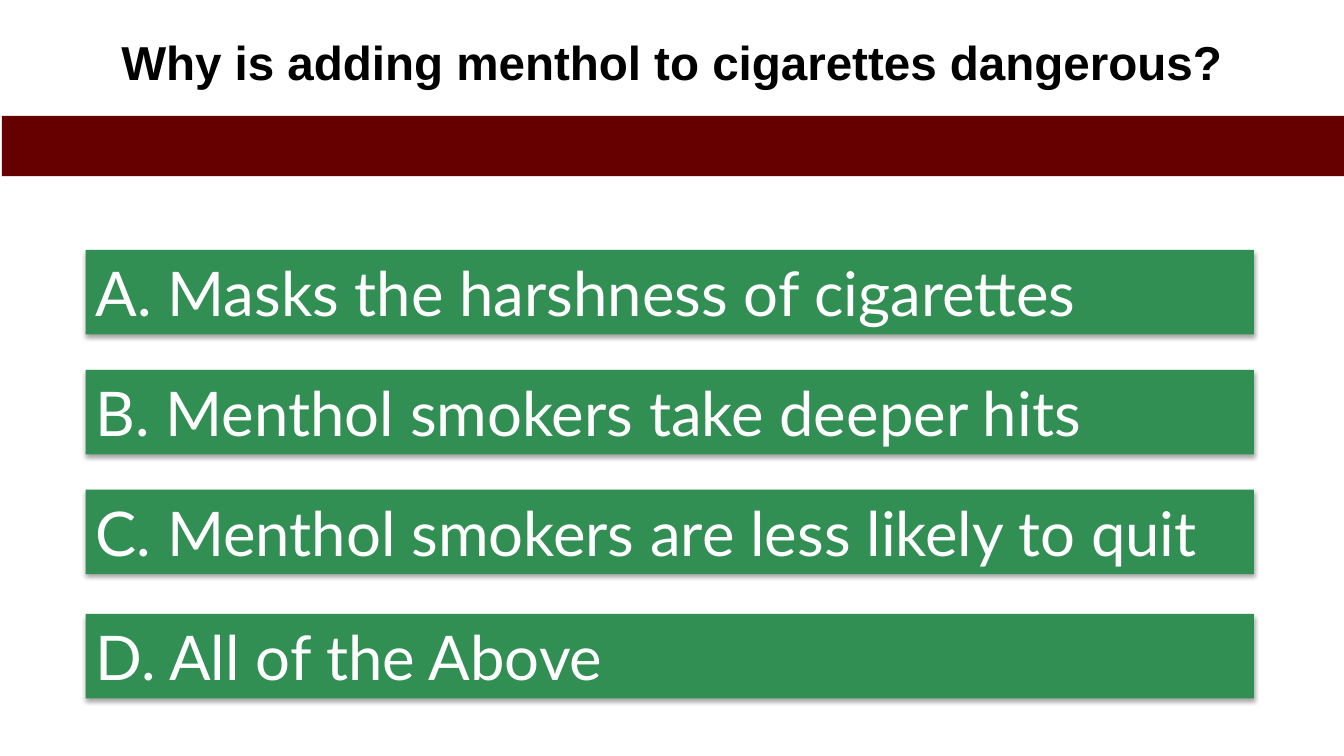
from lxml import etree
from pptx import Presentation
from pptx.dml.color import RGBColor
from pptx.enum.shapes import MSO_SHAPE
from pptx.enum.text import MSO_ANCHOR, MSO_AUTO_SIZE, PP_ALIGN
from pptx.oxml.ns import qn
from pptx.util import Cm, Pt

RECTANGLE = MSO_SHAPE.RECTANGLE
TOP, MIDDLE = MSO_ANCHOR.TOP, MSO_ANCHOR.MIDDLE
LEFT, CENTER = PP_ALIGN.LEFT, PP_ALIGN.CENTER
GROW = MSO_AUTO_SIZE.SHAPE_TO_FIT_TEXT

COLORS = {
    "question": "000000",
    "band": "660000",
    "answer": "328F54",
    "answer_text": "FFFFFF",
    "shadow": "000000",
}
SLIDE_WIDTH, SLIDE_HEIGHT = Cm(33.87), Cm(19.05)
QUESTION = "Why is adding menthol to cigarettes dangerous?"
ANSWERS = [
    ("A. Masks the harshness of cigarettes", Cm(6.3)),
    ("B. Menthol smokers take deeper hits", Cm(9.32)),
    ("C. Menthol smokers are less likely to quit", Cm(12.34)),
    ("D. All of the Above", Cm(15.47)),
]


def color(name):
    return RGBColor.from_string(COLORS[name])


def write(frame, text, font_name, size, color_name, align, anchor, bold=False):
    frame.word_wrap = True
    frame.vertical_anchor = anchor
    paragraph = frame.paragraphs[0]
    paragraph.text = text
    paragraph.alignment = align
    paragraph.font.name = font_name
    paragraph.font.size = Pt(size)
    paragraph.font.bold = bold
    paragraph.font.color.rgb = color(color_name)


def add_bar(slide, left, top, width, height, color_name):
    bar = slide.shapes.add_shape(RECTANGLE, left, top, width, height)
    bar.shadow.inherit = False
    bar.fill.solid()
    bar.fill.fore_color.rgb = color(color_name)
    bar.line.fill.background()
    return bar


def add_soft_shadow(bar):
    effects = bar._element.spPr.find(qn("a:effectLst"))
    shadow = etree.SubElement(
        effects, qn("a:outerShdw"), blurRad=str(Pt(3.1)), dist=str(Pt(1.8)),
        dir="5400000", rotWithShape="0")
    tint = etree.SubElement(shadow, qn("a:srgbClr"), val=COLORS["shadow"])
    etree.SubElement(tint, qn("a:alpha"), val="35000")


def add_question(slide):
    question = slide.shapes.add_textbox(0, Cm(0.58), SLIDE_WIDTH, Cm(2.74))
    question.text_frame.margin_top = Cm(0.25)
    write(question.text_frame, QUESTION, "Arial", 34, "question", CENTER, TOP, bold=True)


def add_answer(slide, text, top):
    answer = add_bar(slide, Cm(2.16), top, Cm(29.44), Cm(2.13), "answer")
    add_soft_shadow(answer)
    write(answer.text_frame, text, "Lato", 44, "answer_text", LEFT, TOP)
    answer.text_frame.auto_size = GROW


def main():
    deck = Presentation()
    deck.slide_width, deck.slide_height = SLIDE_WIDTH, SLIDE_HEIGHT
    slide = deck.slides.add_slide(deck.slide_layouts[6])
    add_question(slide)
    for text, top in ANSWERS:
        add_answer(slide, text, top)
    add_bar(slide, Cm(0.05), Cm(2.92), SLIDE_WIDTH, Cm(1.52), "band")
    deck.save("out.pptx")


if __name__ == "__main__":
    main()
